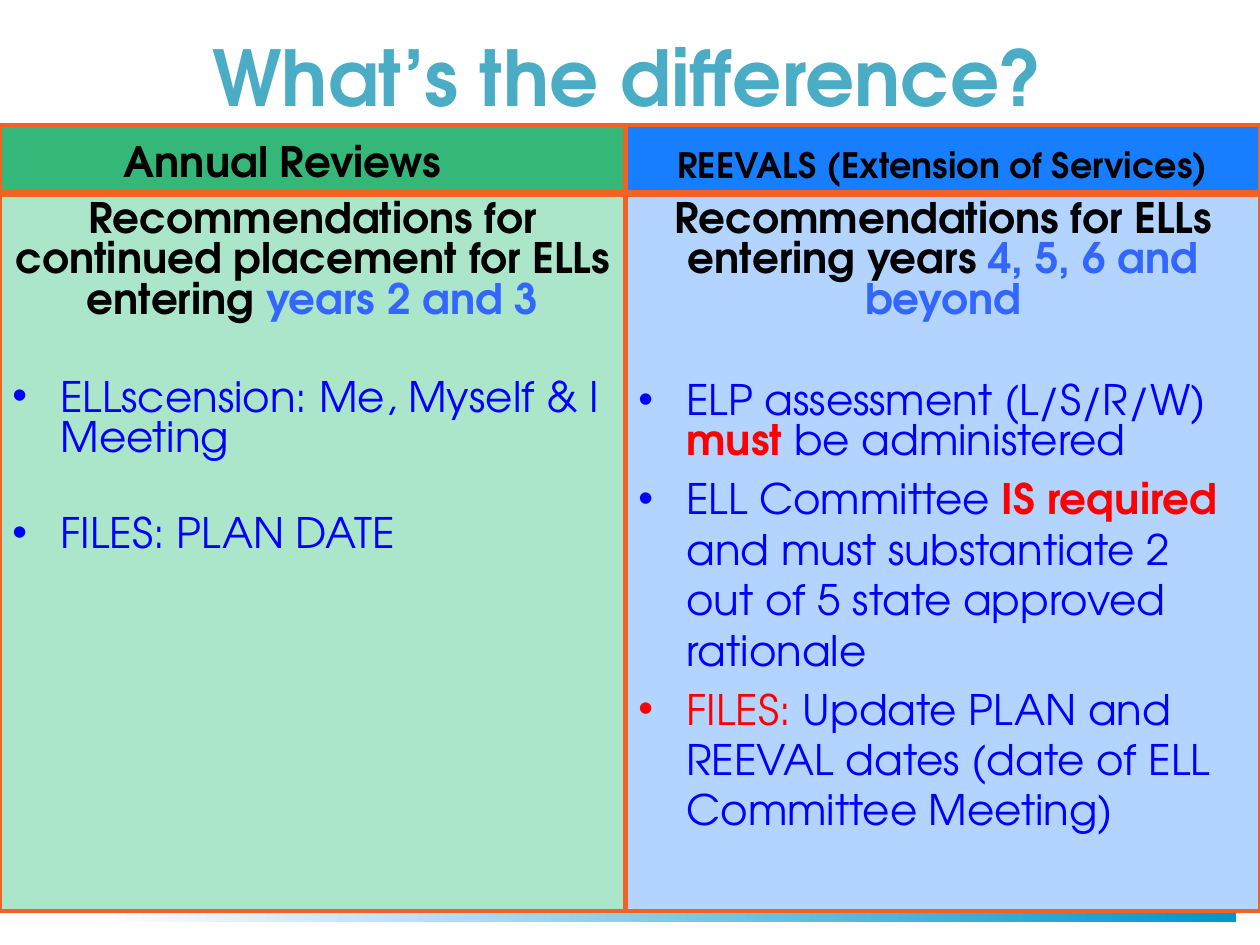
import pptx
import pptx.util
import pptx.dml.color
import pptx.enum.shapes
import pptx.enum.text
import lxml.etree

PX = 914400 / 126
FONT = "TeX Gyre Adventor"
BLACK, BLUE, RED, SKY = "000000", "0000FF", "FF0000", "3366FF"
EDGE = "F26323"
ALIGN = pptx.enum.text.PP_ALIGN
ANCHOR = pptx.enum.text.MSO_ANCHOR


def px(num):
    return pptx.util.Emu(round(num * PX))


def rgb(code):
    return pptx.dml.color.RGBColor.from_string(code)


def rect(slide, box):
    shape = slide.shapes.add_shape(
        pptx.enum.shapes.MSO_SHAPE.RECTANGLE, *map(px, box))
    shape.shadow.inherit = False
    return shape


def panel(slide, box, fill, anchor):
    """Draw an outlined panel and return its text frame."""
    shape = rect(slide, box)
    shape.fill.solid()
    shape.fill.fore_color.rgb = rgb(fill)
    shape.line.color.rgb = rgb(EDGE)
    shape.line.width = pptx.util.Pt(2)
    frame = shape.text_frame
    frame.word_wrap = True
    frame.vertical_anchor = anchor
    return frame


def bullet(para):
    props = para._p.get_or_add_pPr()
    props.set("marL", str(px(48)))
    props.set("indent", str(-px(48)))
    for tag, key, value in (("a:buFont", "typeface", "Arial"),
                            ("a:buChar", "char", "•")):
        mark = lxml.etree.SubElement(props, pptx.oxml.ns.qn(tag))
        mark.set(key, value)


def write(para, runs, size, align=ALIGN.LEFT, gap=0, line=1.0):
    """Fill a paragraph with runs of (text, colour, bold)."""
    para.alignment = align
    para.space_before = pptx.util.Pt(gap)
    para.line_spacing = line
    para.font.name = FONT
    para.font.size = pptx.util.Pt(size)
    bolds = {bold for _, _, bold in runs}
    if len(bolds) == 1:
        para.font.bold = bolds.pop()
    for text, color, bold in runs:
        run = para.add_run()
        run.text = text
        run.font.color.rgb = rgb(color)
        if para.font.bold is None:
            run.font.bold = bold


def title(slide, box, text):
    frame = slide.shapes.add_textbox(*map(px, box)).text_frame
    frame.word_wrap = True
    frame.vertical_anchor = ANCHOR.MIDDLE
    write(frame.paragraphs[0], [(text, "4BACC6", True)], 44, ALIGN.CENTER)


def stripe(slide, box):
    shape = rect(slide, box)
    shape.line.fill.background()
    shape.fill.gradient()
    shape.fill.gradient_angle = 0
    for stop, color in zip(shape.fill.gradient_stops, ("FFFFFF", "0095D3")):
        stop.color.rgb = rgb(color)


def column(slide, box, data):
    left, top, width, height = box
    # Heading band
    frame = panel(slide, (left, top, width, 67), data["dark"], ANCHOR.BOTTOM)
    frame.margin_right = px(data["inset"])
    write(frame.paragraphs[0], [(data["head"], BLACK, True)], data["size"],
          ALIGN.CENTER)
    # Body: lead sentence, then bullets
    frame = panel(slide, (left, top + 70, width, height - 70), data["pale"],
                  ANCHOR.TOP)
    write(frame.paragraphs[0], data["lead"], 24, ALIGN.CENTER, line=0.8)
    for gap, line, runs in data["items"]:
        para = frame.add_paragraph()
        bullet(para)
        write(para, runs, 24, gap=gap, line=line)


ANNUAL = {
    "head": "Annual Reviews", "size": 24, "inset": 73,
    "dark": "36B77A", "pale": "ABE6CA",
    "lead": [("Recommendations for continued placement for ELLs entering ",
              BLACK, True), ("years 2 and 3", SKY, True)],
    "items": [
        (33, 0.8, [("ELLscension: Me, Myself & I Meeting", BLUE, False)]),
        (32, 0.8, [("FILES: PLAN DATE", BLUE, False)]),
    ],
}
REEVAL = {
    "head": "REEVALS (Extension of Services)", "size": 20, "inset": 13,
    "dark": "177FFF", "pale": "B2D4FF",
    "lead": [("Recommendations for ELLs entering years ", BLACK, True),
             ("4, 5, 6 and beyond", SKY, True)],
    "items": [
        (35, 0.8, [("ELP assessment (L/S/R/W) ", BLUE, False),
                   ("must", RED, True),
                   (" be administered", BLUE, False)]),
        (5, 1.0, [("ELL Committee ", BLUE, False),
                  ("IS required ", RED, True),
                  ("and must substantiate 2 out of 5 state approved rationale",
                   BLUE, False)]),
        (5, 1.0, [("FILES: ", RED, False),
                  ("Update PLAN and REEVAL dates "
                   "(date of ELL Committee Meeting)", BLUE, False)]),
    ],
}


def main():
    deck = pptx.Presentation()
    deck.slide_width, deck.slide_height = px(1260), px(945)
    slide = deck.slides.add_slide(deck.slide_layouts[6])
    stripe(slide, (98, 856, 1138, 66))
    title(slide, (59, 20, 1138, 112), "What’s the difference?")
    column(slide, (0, 125, 625, 786), ANNUAL)
    column(slide, (626, 125, 634, 786), REEVAL)
    deck.save("out.pptx")


if __name__ == "__main__":
    main()
